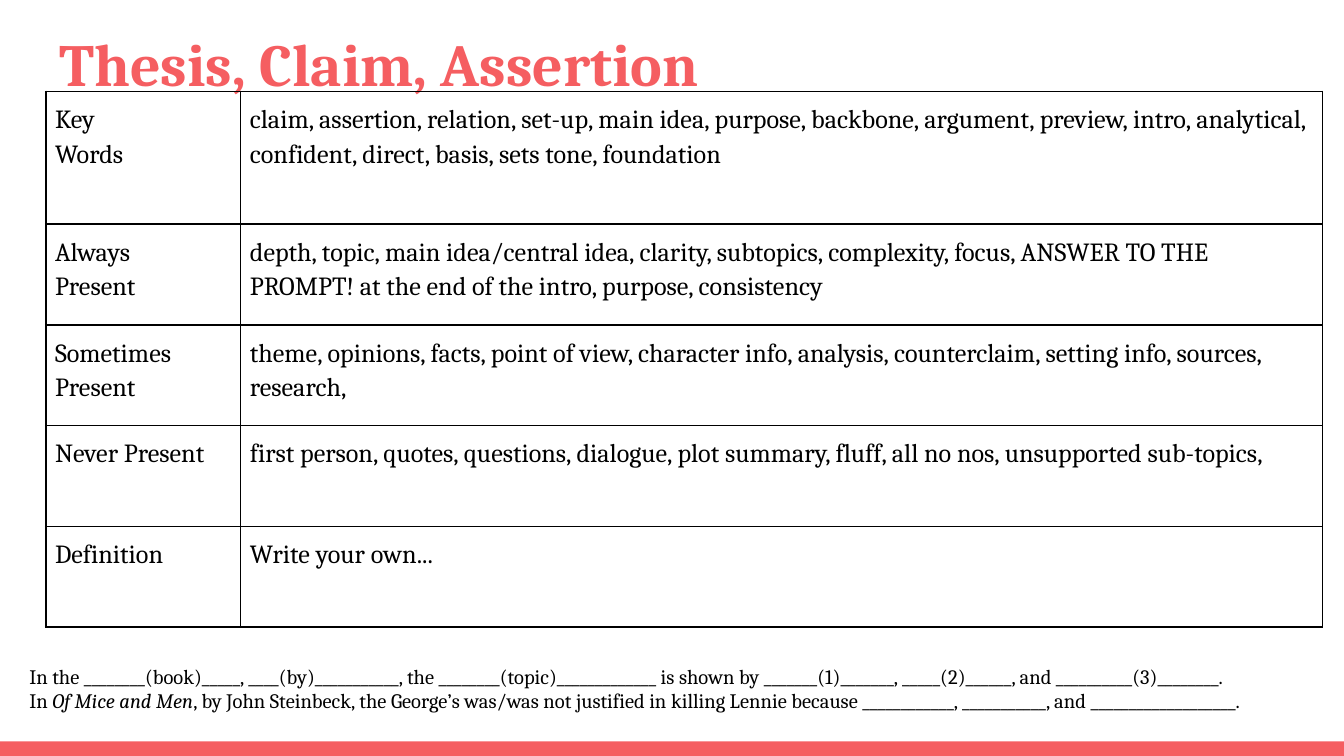
from dataclasses import dataclass

from lxml import etree
from pptx import Presentation
from pptx.dml.color import RGBColor
from pptx.enum.shapes import MSO_SHAPE
from pptx.enum.text import MSO_ANCHOR, MSO_AUTO_SIZE, PP_ALIGN
from pptx.oxml.ns import qn
from pptx.util import Pt

RECTANGLE = MSO_SHAPE.RECTANGLE
TOP, MIDDLE = MSO_ANCHOR.TOP, MSO_ANCHOR.MIDDLE
NO_AUTOFIT = MSO_AUTO_SIZE.NONE
LEFT = PP_ALIGN.LEFT
TITLE_ONLY = 5


@dataclass(frozen=True)
class Theme:
    font: str = "Cambria"
    accent: str = "F55E61"
    ink: str = "000000"
    title_size: float = 32
    table_size: float = 14
    frame_size: float = 11
    border: float = 1


THEME = Theme()

# Each row: label lines, description
CRITERIA = [
    (["Key", "Words"],
     "claim, assertion, relation, set-up, main idea, purpose, backbone, argument, "
     "preview, intro, analytical, confident, direct, basis, sets tone, foundation"),
    (["Always", "Present"],
     "depth, topic, main idea/central idea, clarity, subtopics, complexity, focus, "
     "ANSWER TO THE PROMPT! at the end of the intro, purpose, consistency"),
    (["Sometimes", "Present"],
     "theme, opinions, facts, point of view, character info, analysis, counterclaim, "
     "setting info, sources, research,"),
    (["Never Present"],
     "first person, quotes, questions, dialogue, plot summary, fluff, all no nos, "
     "unsupported sub-topics,"),
    (["Definition"], "Write your own..."),
]

# Sentence frames: line spacing and (text, italic) runs
SENTENCE_FRAMES = [
    (1.5, [("In the ________(book)_____, ____(by)___________, the "
            "________(topic)_____________ is shown by _______(1)_______, "
            "_____(2)______, and __________(3)________.", False)]),
    (1.0, [("In ", False), ("Of Mice and Men", True),
           (", by John Steinbeck, the George’s was/was not justified in killing "
            "Lennie because ____________, ___________, and ___________________.", False)]),
]


def style_run(run, size, color, bold=False, italic=False):
    run.font.name = THEME.font
    run.font.size = Pt(size)
    run.font.bold = bold
    run.font.italic = italic
    run.font.color.rgb = RGBColor.from_string(color)


def set_margins(holder, margin):
    holder.margin_left = holder.margin_right = Pt(margin)
    holder.margin_top = holder.margin_bottom = Pt(margin)


def add_bottom_bar(slide, box):
    bar = slide.shapes.add_shape(RECTANGLE, *map(Pt, box))
    bar.shadow.inherit = False
    bar.fill.solid()
    bar.fill.fore_color.rgb = RGBColor.from_string(THEME.accent)
    bar.line.fill.background()


def place_title(slide, box):
    title = slide.shapes.title
    title.left, title.top, title.width, title.height = map(Pt, box)
    frame = title.text_frame
    frame.text = "Thesis, Claim, Assertion"
    frame.word_wrap = True
    frame.auto_size = NO_AUTOFIT
    frame.vertical_anchor = TOP
    set_margins(frame, 7.2)
    heading = frame.paragraphs[0]
    heading.alignment = LEFT
    style_run(heading.runs[0], THEME.title_size, THEME.accent, bold=True)


def add_borders(cell):
    properties = cell._tc.get_or_add_tcPr()
    for position, side in enumerate(("lnL", "lnR", "lnT", "lnB")):
        line = etree.Element(qn(f"a:{side}"), w=str(Pt(THEME.border)))
        fill = etree.SubElement(line, qn("a:solidFill"))
        etree.SubElement(fill, qn("a:srgbClr"), val=THEME.ink)
        properties.insert(position, line)


def fill_cell(cell, lines):
    cell.text_frame.text = "\n".join(lines)
    cell.vertical_anchor = TOP
    set_margins(cell, 5)
    for paragraph in cell.text_frame.paragraphs:
        paragraph.line_spacing = 1.15
        style_run(paragraph.runs[0], THEME.table_size, THEME.ink)
    cell.fill.background()
    add_borders(cell)


def add_criteria_table(slide, box):
    left, top, width, height = box
    label_width, row_height = 104.4, 54
    table = slide.shapes.add_table(len(CRITERIA), 2, *map(Pt, box)).table
    table.first_row = table.horz_banding = False
    table.columns[0].width = Pt(label_width)
    table.columns[1].width = Pt(width - label_width)
    # The first row takes what the equal rows leave
    for row in table.rows:
        row.height = Pt(row_height)
    table.rows[0].height = Pt(height - row_height * (len(CRITERIA) - 1))
    for index, (label, description) in enumerate(CRITERIA):
        fill_cell(table.cell(index, 0), label)
        fill_cell(table.cell(index, 1), [description])


def add_sentence_frames(slide, box):
    frame = slide.shapes.add_textbox(*map(Pt, box)).text_frame
    frame.word_wrap = True
    frame.vertical_anchor = MIDDLE
    set_margins(frame, 7.2)
    for index, (spacing, pieces) in enumerate(SENTENCE_FRAMES):
        sentence = frame.add_paragraph() if index else frame.paragraphs[0]
        sentence.line_spacing = spacing
        for text, italic in pieces:
            run = sentence.add_run()
            run.text = text
            style_run(run, THEME.frame_size, THEME.ink, italic=italic)


def main():
    deck = Presentation()
    deck.slide_width, deck.slide_height = Pt(720), Pt(405)
    slide = deck.slides.add_slide(deck.slide_layouts[TITLE_ONLY])
    add_bottom_bar(slide, (0, 397.2, 720, 7.8))
    place_title(slide, (24.5, 7.2, 671, 46.8))
    add_criteria_table(slide, (24.5, 49, 684, 287))
    add_sentence_frames(slide, (8.6, 335.5, 707, 59.8))
    deck.save("out.pptx")


if __name__ == "__main__":
    main()
